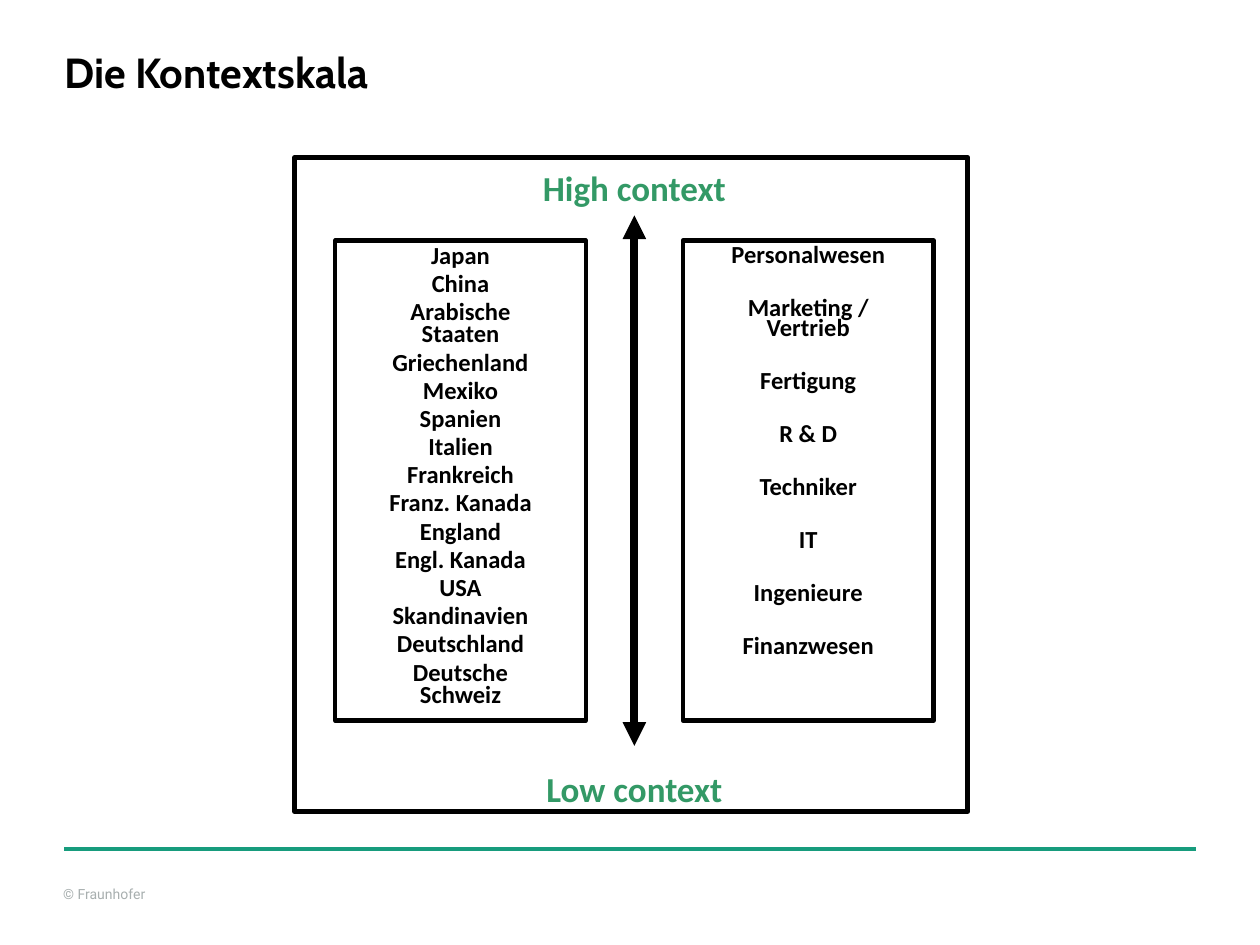
from lxml import etree
from pptx import Presentation
from pptx import util as u
from pptx.dml.color import RGBColor
from pptx.enum import shapes, text
from pptx.oxml.ns import qn

TITLE = "Die Kontextskala"
FOOTER = "© Fraunhofer"
COUNTRIES = [
    "Japan", "China", "Arabische Staaten", "Griechenland", "Mexiko",
    "Spanien", "Italien", "Frankreich", "Franz. Kanada", "England",
    "Engl. Kanada", "USA", "Skandinavien", "Deutschland", "Deutsche Schweiz",
]
DEPARTMENTS = [
    "Personalwesen", "Marketing / Vertrieb", "Fertigung", "R & D",
    "Techniker", "IT", "Ingenieure", "Finanzwesen",
]
PANELS = [
    {"lines": COUNTRIES, "text_width": 1.48, "line_spacing": 0.75, "space_before": 3.5},
    {"lines": DEPARTMENTS, "text_width": 1.61, "line_spacing": 0.7, "space_before": 18.5},
]
POLES = [("High context", 1.27), ("Low context", 6.04)]

WIDTH, HEIGHT = 10, 7.5
MARGIN = 0.51
CONTENT_WIDTH = WIDTH - 2 * MARGIN
FRAME = (2.34, 1.25, 5.34, 5.19)
PANEL_LEFT, PANEL_TOP, PANEL_WIDTH, PANEL_HEIGHT = 2.66, 1.91, 1.99, 3.81
PANEL_PITCH = 2.76
AXIS = PANEL_LEFT + (PANEL_PITCH + PANEL_WIDTH) / 2
AXIS_OVERHANG = 0.2
POLE_WIDTH, POLE_HEIGHT = 1.66, 0.43
BLACK, GREEN, TEAL, GREY = "000000", "339966", "179C7D", "A8AFAF"


def color(value):
    return RGBColor.from_string(value)


def inches(*values):
    return [u.Inches(value) for value in values]


def write(shape, lines, font="Calibri", size=14, fill=BLACK, bold=True,
          align=text.PP_ALIGN.CENTER, anchor=text.MSO_ANCHOR.TOP, wrap=True,
          insets=(0.1, 0.05), line_spacing=1.0, space_before=0):
    frame = shape.text_frame
    frame.word_wrap = wrap
    frame.auto_size = text.MSO_AUTO_SIZE.NONE
    frame.vertical_anchor = anchor
    frame.margin_left = frame.margin_right = u.Inches(insets[0])
    frame.margin_top = frame.margin_bottom = u.Inches(insets[1])
    frame.text = "\n".join(lines)
    for index, paragraph in enumerate(frame.paragraphs):
        paragraph.alignment = align
        paragraph.line_spacing = line_spacing
        paragraph.space_before = u.Pt(space_before if index else 0)
        paragraph.font.name = font
        paragraph.font.size = u.Pt(size)
        paragraph.font.bold = bold
        paragraph.font.color.rgb = color(fill)


def add_text(slide, box, lines, **formatting):
    write(slide.shapes.add_textbox(*inches(*box)), lines, **formatting)


def add_box(slide, box, line_width):
    shape = slide.shapes.add_shape(shapes.MSO_SHAPE.RECTANGLE, *inches(*box))
    shape.shadow.inherit = False
    shape.fill.background()
    shape.line.color.rgb = color(BLACK)
    shape.line.width = u.Pt(line_width)


def add_line(slide, start, end, fill, line_width, arrows=False):
    connector = slide.shapes.add_connector(
        shapes.MSO_CONNECTOR.STRAIGHT, *inches(*start, *end))
    connector.line.color.rgb = color(fill)
    connector.line.width = u.Pt(line_width)
    properties = connector.element.spPr
    if arrows:
        for tag in ("a:headEnd", "a:tailEnd"):
            etree.SubElement(properties.find(qn("a:ln")), qn(tag), type="triangle")
    etree.SubElement(properties, qn("a:effectLst"))


def main():
    presentation = Presentation()
    presentation.slide_width, presentation.slide_height = inches(WIDTH, HEIGHT)
    slide = presentation.slides.add_slide(presentation.slide_layouts[5])

    title = slide.shapes.title
    title.left, title.top, title.width, title.height = inches(
        MARGIN, 0.37, CONTENT_WIDTH, 0.4)
    write(title, [TITLE], font="Cabin", size=24, align=text.PP_ALIGN.LEFT,
          anchor=text.MSO_ANCHOR.MIDDLE, insets=(0, 0))

    add_text(slide, (0.5, 7.03, 0.98, 0.13), [FOOTER], font="Roboto", size=8,
             fill=GREY, bold=False, align=text.PP_ALIGN.LEFT, insets=(0, 0))
    add_line(slide, (MARGIN, 6.74), (WIDTH - MARGIN, 6.74), TEAL, 2.5)

    add_box(slide, FRAME, 3)
    for column, panel in enumerate(PANELS):
        left = PANEL_LEFT + column * PANEL_PITCH
        add_box(slide, (left, PANEL_TOP, PANEL_WIDTH, PANEL_HEIGHT), 2.5)
        text_left = left + (PANEL_WIDTH - panel["text_width"]) / 2
        add_text(slide, (text_left, PANEL_TOP, panel["text_width"], PANEL_HEIGHT),
                 panel["lines"], line_spacing=panel["line_spacing"],
                 space_before=panel["space_before"])

    add_line(slide, (AXIS, PANEL_TOP - AXIS_OVERHANG),
             (AXIS, PANEL_TOP + PANEL_HEIGHT + AXIS_OVERHANG), BLACK, 4.5, arrows=True)
    for label, top in POLES:
        add_text(slide, (AXIS - POLE_WIDTH / 2, top, POLE_WIDTH, POLE_HEIGHT),
                 [label], size=20, fill=GREEN, wrap=False)

    presentation.save("out.pptx")


if __name__ == "__main__":
    main()
